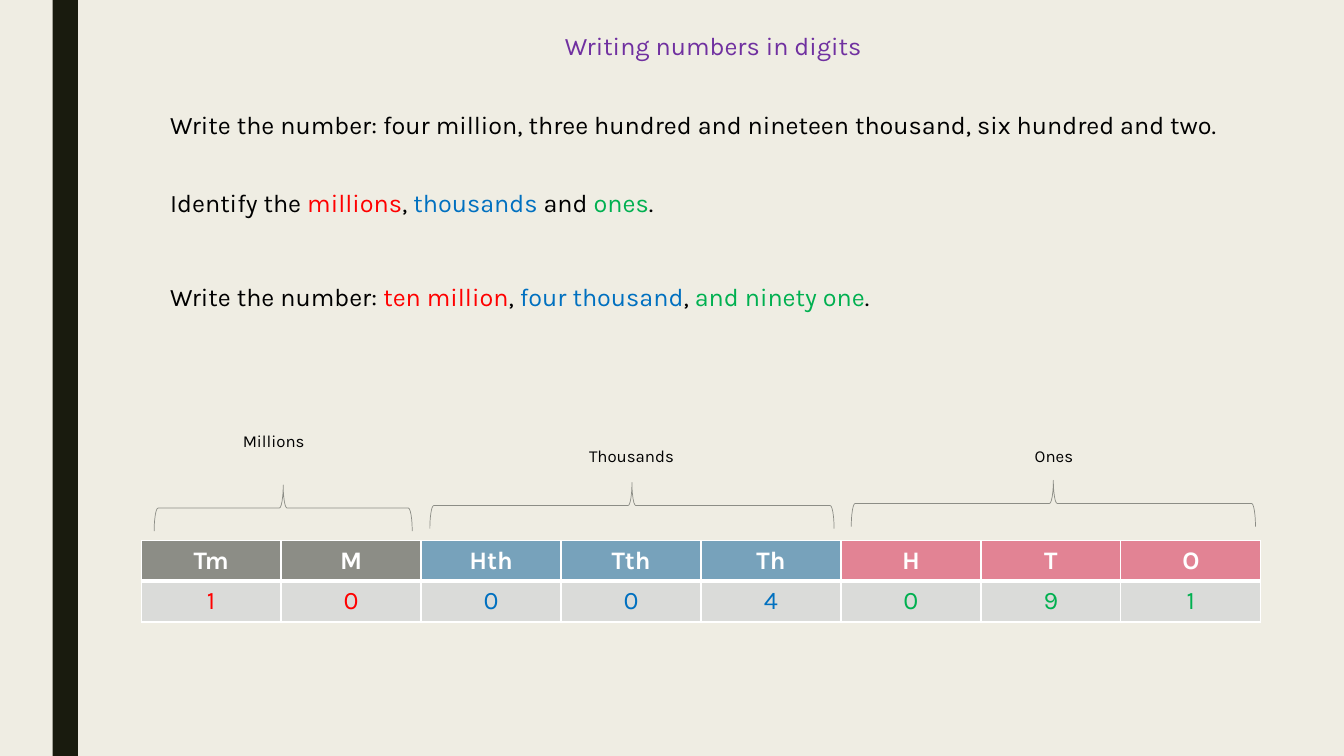
from lxml import etree
from pptx import Presentation
from pptx.dml.color import RGBColor
from pptx.enum import shapes, text
from pptx.oxml import ns
from pptx.util import Pt

FONT = "Karla"
COLORS = {
    "background": "EFEDE3", "bar": "191B0E", "title": "7030A0",
    "black": "000000", "white": "FFFFFF", "digit_row": "DADBD9",
    "gray": "8C8D86", "blue_gray": "77A2BB", "pink": "E28394",
    "millions": "FF0000", "thousands": "0070C0", "ones": "00B050",
}
GROUPS = [
    ("millions", "gray", ["Tm", "M"], "10"),
    ("thousands", "blue_gray", ["Hth", "Tth", "Th"], "004"),
    ("ones", "pink", ["H", "T", "O"], "091"),
]
BRACES = [
    ("Millions", 202.3, 362.9, 184.3, 114.5, 303.8),
    ("Thousands", 451.4, 361.1, 288.7, 370.1, 314.6),
    ("Ones", 752.4, 359.6, 288.7, 671.8, 314.6),
]
SENTENCES = [
    (74.2, [("Write the number: four million, three hundred and nineteen "
             "thousand, six hundred and two.", "black")]),
    (130.3, [("Identify the ", "black"), ("millions", "millions"),
             (", ", "black"), ("thousands", "thousands"),
             (" and ", "black"), ("ones", "ones"), (".", "black")]),
    (197.3, [("Write the number: ", "black"), ("ten million", "millions"),
             (", ", "black"), ("four thousand", "thousands"),
             (", ", "black"), ("and ninety one", "ones"), (".", "black")]),
]


def rgb(name):
    return RGBColor.from_string(COLORS[name])


def add_run(p, words, color="black", size=18, bold=False):
    r = p.add_run()
    r.text = words
    r.font.name = FONT
    r.font.size = Pt(size)
    r.font.bold = bold
    r.font.color.rgb = rgb(color)


def add_text(s, runs, left, top, width, height=29, size=18, align=text.PP_ALIGN.LEFT):
    box = s.shapes.add_textbox(Pt(left), Pt(top), Pt(width), Pt(height))
    tf = box.text_frame
    tf.word_wrap = True
    tf.auto_size = text.MSO_AUTO_SIZE.SHAPE_TO_FIT_TEXT
    p = tf.paragraphs[0]
    p.alignment = align
    for words, color in runs:
        add_run(p, words, color=color, size=size)


def add_bar(s):
    sp = s.shapes.add_shape(shapes.MSO_SHAPE.RECTANGLE, Pt(37.6), 0, Pt(18), Pt(540))
    sp.shadow.inherit = False
    sp.fill.solid()
    sp.fill.fore_color.rgb = rgb("bar")
    sp.line.fill.background()


def add_brace(s, center_x, center_y, length, depth=33):
    sp = s.shapes.add_shape(
        shapes.MSO_SHAPE.RIGHT_BRACE, Pt(center_x - depth / 2),
        Pt(center_y - length / 2), Pt(depth), Pt(length))
    sp.rotation = 270
    sp.shadow.inherit = False
    sp.fill.background()
    sp.line.color.rgb = rgb("gray")
    sp.line.width = Pt(0.5)


def set_borders(cell, **widths):
    tc_pr = cell._tc.get_or_add_tcPr()
    for side in "LRTB":
        ln = etree.SubElement(tc_pr, ns.qn(f"a:ln{side}"), w=str(Pt(widths.get(side, 1))))
        fill = etree.SubElement(ln, ns.qn("a:solidFill"))
        etree.SubElement(fill, ns.qn("a:srgbClr"), val=COLORS["white"])


def fill_cell(cell, words, fill, color, bold=False, **borders):
    set_borders(cell, **borders)
    cell.fill.solid()
    cell.fill.fore_color.rgb = rgb(fill)
    cell.vertical_anchor = text.MSO_ANCHOR.MIDDLE
    p = cell.text_frame.paragraphs[0]
    p.alignment = text.PP_ALIGN.CENTER
    add_run(p, words, color=color, bold=bold)


def add_place_value_table(s):
    columns = [(place, digit, fill, color)
               for color, fill, places, digits in GROUPS
               for place, digit in zip(places, digits)]
    table = s.shapes.add_table(
        2, len(columns), Pt(100.8), Pt(385.9), Pt(800), Pt(58.4)).table
    for i, (place, digit, fill, color) in enumerate(columns):
        table.columns[i].width = Pt(100)
        fill_cell(table.cell(0, i), place, fill, "white", bold=True, B=3)
        fill_cell(table.cell(1, i), digit, "digit_row", color, T=3)


def main():
    prs = Presentation()
    prs.slide_width, prs.slide_height = Pt(960), Pt(540)
    s = prs.slides.add_slide(prs.slide_layouts[6])
    s.background.fill.solid()
    s.background.fill.fore_color.rgb = rgb("background")

    add_bar(s)
    add_place_value_table(s)
    for label, center_x, center_y, length, left, top in BRACES:
        add_brace(s, center_x, center_y, length)
        add_text(s, [(label, "black")], left, top, 162, height=21.8, size=12,
                 align=text.PP_ALIGN.CENTER)
    add_text(s, [("Writing numbers in digits ", "title")], 149.8, 18, 723.6,
             align=text.PP_ALIGN.CENTER)
    for top, runs in SENTENCES:
        add_text(s, runs, 114.5, top, 812)

    prs.save("out.pptx")


if __name__ == "__main__":
    main()
